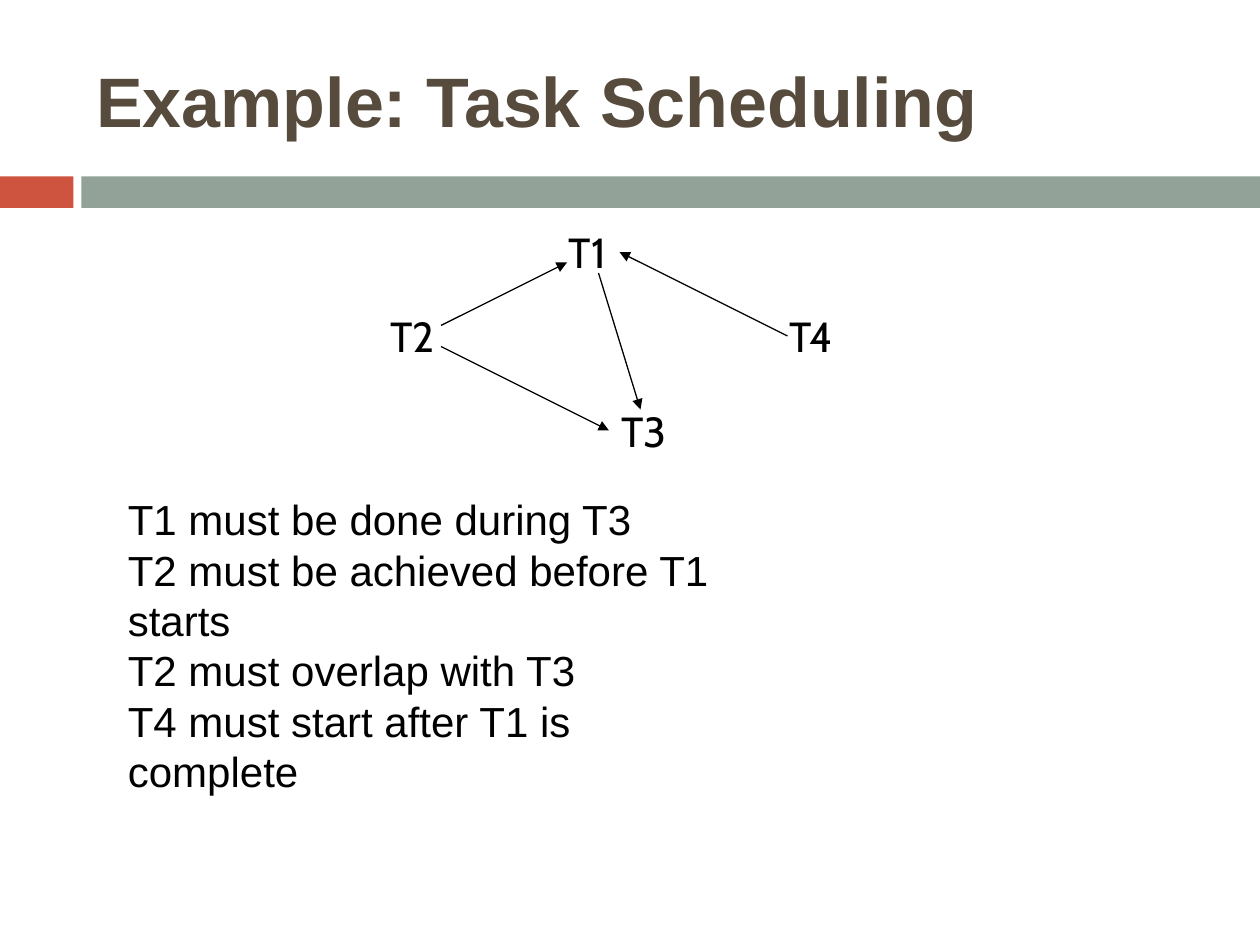
from lxml import etree
from pptx import Presentation
from pptx.dml.color import RGBColor
from pptx.enum.shapes import MSO_CONNECTOR, MSO_SHAPE
from pptx.enum.text import MSO_ANCHOR
from pptx.oxml.ns import qn
from pptx.util import Pt

RECTANGLE = MSO_SHAPE.RECTANGLE
STRAIGHT = MSO_CONNECTOR.STRAIGHT
TOP, MIDDLE = MSO_ANCHOR.TOP, MSO_ANCHOR.MIDDLE


def color(value):
    return RGBColor.from_string(value)


def add_text(shapes, place, lines, font, anchor=TOP, wrap=True, spacing=None):
    box = shapes.add_textbox(*map(Pt, place))
    frame = box.text_frame
    frame.word_wrap = wrap
    frame.vertical_anchor = anchor
    for index, line in enumerate(lines):
        para = frame.paragraphs[0] if index == 0 else frame.add_paragraph()
        para.line_spacing = spacing
        span = para.add_run()
        span.text = line
        span.font.color.rgb = color(font["color"])
        for name in ("name", "size", "bold"):
            setattr(span.font, name, font[name])


title_font = {"name": "Arial", "size": Pt(40), "bold": True, "color": "564B3C"}
rule_font = {"name": "Arial", "size": Pt(24), "bold": False, "color": "000000"}
task_font = {**rule_font, "name": "Cabin"}

deck = Presentation()
deck.slide_width, deck.slide_height = Pt(720), Pt(540)
page = deck.slides.add_slide(deck.slide_layouts[6])

# Band under the title
for left, width, fill in [(0, 42, "CF543F"), (46.5, 673.5, "93A299")]:
    bar = page.shapes.add_shape(RECTANGLE, Pt(left), Pt(100.8), Pt(width), Pt(18))
    bar.shadow.inherit = False
    bar.fill.solid()
    bar.fill.fore_color.rgb = color(fill)
    bar.line.fill.background()

# Title
add_text(page.shapes, (48, 18, 642, 78), ["Example: Task Scheduling"],
         title_font, anchor=MIDDLE)

# Constraints between the tasks
rules = [
    "T1 must be done during T3",
    "T2 must be achieved before T1 starts",
    "T2 must overlap with T3",
    "T4 must start after T1 is complete",
]
add_text(page.shapes, (66, 278.6, 368, 124), rules, rule_font, spacing=Pt(28.8))

# Task graph: labels
graph = page.shapes.add_group_shape()
tasks = {"T1": (318, 126), "T2": (216, 174), "T3": (348, 228), "T4": (444, 174)}
for task, (left, top) in tasks.items():
    add_text(graph.shapes, (left, top, 42, 36), [task], task_font, wrap=False)

# Task graph: arrows, each from start to end
arrows = [
    (342, 156, 366, 234),  # T1 to T3
    (252, 186, 324, 150),  # T2 to T1
    (252, 198, 348, 246),  # T2 to T3
    (450, 192, 354, 144),  # T4 to T1
]
for ends in arrows:
    arrow = graph.shapes.add_connector(STRAIGHT, *map(Pt, ends))
    arrow.line.color.rgb = color("000000")
    arrow.line.width = Pt(0.75)
    etree.SubElement(arrow.line._get_or_add_ln(), qn("a:tailEnd"), type="triangle")
    etree.SubElement(arrow._element.spPr, qn("a:effectLst"))

deck.save("out.pptx")
